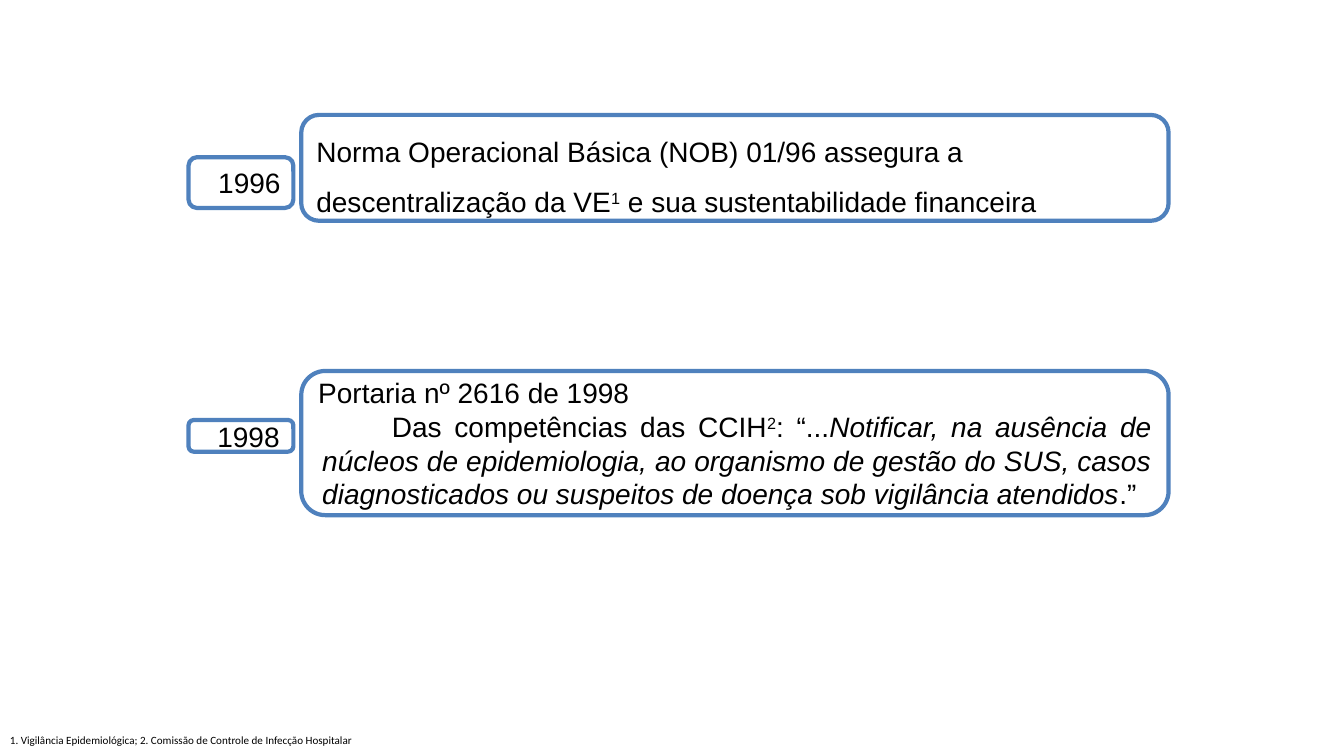
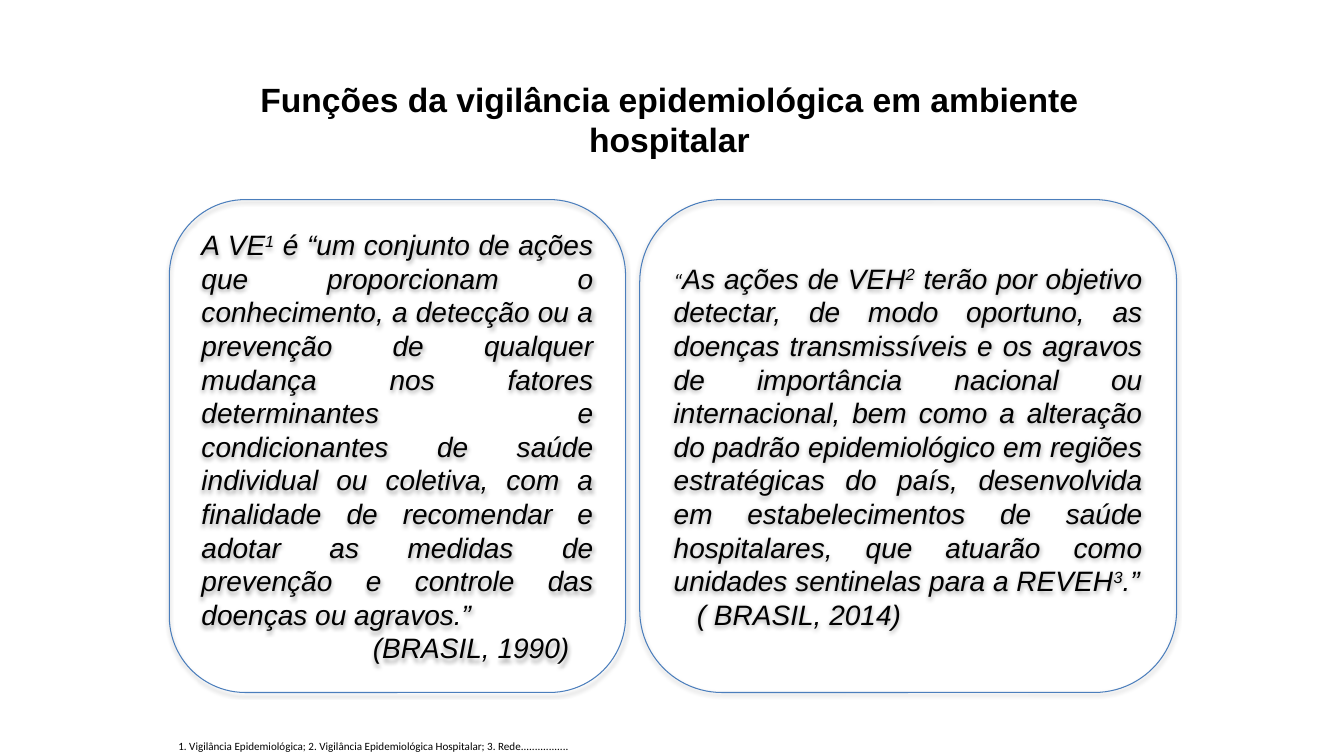
from dataclasses import dataclass

import pptx
import pptx.dml.color
import pptx.enum.shapes
import pptx.enum.text
import pptx.oxml
import pptx.oxml.ns
import pptx.util

Inches, Pt = pptx.util.Inches, pptx.util.Pt
ALIGN = pptx.enum.text.PP_ALIGN
ANCHOR = pptx.enum.text.MSO_ANCHOR
FIT = pptx.enum.text.MSO_AUTO_SIZE
ROUNDED = pptx.enum.shapes.MSO_SHAPE.ROUNDED_RECTANGLE
SLIDE_W, SLIDE_H = 13.33, 7.5


@dataclass(frozen=True)
class Theme:
    font: str = "Arial"
    note_font: str = "Calibri"
    text: str = "000000"
    entry_line: str = "4F81BD"
    panel_line: str = "4B7EBC"
    title_size: float = 24
    body_size: float = 20
    quote_size: float = 15
    note_size: float = 7.9
    entry_width: float = 3
    panel_width: float = 0.75


THEME = Theme()


@dataclass(frozen=True)
class Box:
    """A region in percent of the slide's width and height."""
    x: float
    y: float
    w: float
    h: float

    def inner(self, x, y, w, h):
        """The region at the given shares of this one."""
        return Box(self.x + x * self.w, self.y + y * self.h, w * self.w, h * self.h)

    def emu(self):
        return (Inches(self.x * SLIDE_W / 100), Inches(self.y * SLIDE_H / 100),
                Inches(self.w * SLIDE_W / 100), Inches(self.h * SLIDE_H / 100))


def rgb(value):
    return pptx.dml.color.RGBColor.from_string(value)


def style(font, size=THEME.body_size, name=THEME.font, bold=False, italic=False):
    font.size, font.name = Pt(size), name
    font.bold, font.italic = bold, italic
    font.color.rgb = rgb(THEME.text)


def write(p, runs, align=ALIGN.LEFT, left=0, first=0, **font):
    """Fill a paragraph with (text, mark) runs: ^ superscript, i italic, q small quote."""
    p.alignment = align
    pPr = p._p.get_or_add_pPr()
    pPr.set("marL", str(Inches(left)))
    pPr.set("indent", str(Inches(first)))
    style(p.font, **font)
    for text, mark in runs:
        r = p.add_run()
        r.text = text
        if mark == "^":
            r._r.get_or_add_rPr().set("baseline", "30000")
        elif mark == "i":
            r.font.italic = True
        elif mark == "q":
            r.font.size, r.font.name = Pt(THEME.quote_size), THEME.note_font


def rounded(slide, box, line, width):
    sp = slide.shapes.add_shape(ROUNDED, *box.emu())
    sp.shadow.inherit = False
    sp.fill.background()
    sp.line.color.rgb = rgb(line)
    sp.line.width = Pt(width)
    sp.text_frame.word_wrap = True
    sp.text_frame.vertical_anchor = ANCHOR.MIDDLE
    return sp


def drop_shadow(sp):
    effects = sp._element.spPr.find(pptx.oxml.ns.qn("a:effectLst"))
    effects.append(pptx.oxml.parse_xml(
        f'<a:outerShdw {pptx.oxml.ns.nsdecls("a")} blurRad="{Pt(3.1)}" dist="{Pt(1.8)}" '
        'dir="5400000" rotWithShape="0"><a:srgbClr val="000000">'
        '<a:alpha val="35000"/></a:srgbClr></a:outerShdw>'))


def fill_paragraphs(tf, paragraphs, **font):
    for i, (runs, layout) in enumerate(paragraphs):
        p = tf.add_paragraph() if i else tf.paragraphs[0]
        write(p, runs, **layout, **font)


def timeline_entry(slide, box, year, tag_top, tag_height, paragraphs):
    sp = rounded(slide, box.inner(0.115, 0, 0.885, 1), THEME.entry_line, THEME.entry_width)
    fill_paragraphs(sp.text_frame, paragraphs)
    tag = rounded(slide, box.inner(0, tag_top, 0.107, tag_height),
                  THEME.entry_line, THEME.entry_width)
    tf = tag.text_frame
    tf.margin_left, tf.margin_right = Inches(0.27), Inches(0.02)
    tf.margin_top = tf.margin_bottom = 0
    write(tf.paragraphs[0], [(year, "")])
    return sp


def quote_panel(slide, box, paragraphs):
    sp = rounded(slide, box, THEME.panel_line, THEME.panel_width)
    drop_shadow(sp)
    fill_paragraphs(sp.text_frame, paragraphs, italic=True)


def footnote(slide, box, text):
    tf = slide.shapes.add_textbox(*box.emu()).text_frame
    tf.word_wrap = True
    tf.auto_size = FIT.SHAPE_TO_FIT_TEXT
    write(tf.paragraphs[0], [(text, "")], size=THEME.note_size, name=THEME.note_font)


def title(slide, box, text):
    sp = slide.shapes.title
    sp.left, sp.top, sp.width, sp.height = box.emu()
    tf = sp.text_frame
    tf.word_wrap, tf.auto_size = True, FIT.NONE
    tf.vertical_anchor = ANCHOR.TOP
    write(tf.paragraphs[0], [(text, "")], ALIGN.CENTER, size=THEME.title_size, bold=True)


def timeline_slide(prs):
    slide = prs.slides.add_slide(prs.slide_layouts.get_by_name("Blank"))
    norm = timeline_entry(slide, Box(14.03, 15.2, 72.92, 14), "1996", 0.4, 0.48, [
        ([("Norma Operacional Básica (NOB) 01/96 assegura a descentralização da VE", ""),
          ("1", "^"), (" e sua sustentabilidade financeira", "")], {})])
    norm.text_frame.paragraphs[0].line_spacing = 1.5
    timeline_entry(slide, Box(14.03, 49.07, 72.92, 19.07), "1998", 0.34, 0.22, [
        ([("Portaria nº 2616 de 1998", "")], dict(align=ALIGN.JUSTIFY)),
        ([("Das competências das CCIH", ""), ("2", "^"), (": “...", ""),
          ("Notificar, na ausência de núcleos de epidemiologia, ao organismo de gestão "
           "do SUS, casos diagnosticados ou suspeitos de doença sob vigilância "
           "atendidos", "i"), (".”", "")],
         dict(align=ALIGN.JUSTIFY, left=0.04, first=0.69))])
    footnote(slide, Box(0, 96.4, 44.86, 3.07),
             "1. Vigilância Epidemiológica; 2. Comissão de Controle de Infecção Hospitalar")


def functions_slide(prs):
    slide = prs.slides.add_slide(prs.slide_layouts.get_by_name("Title Only"))
    title(slide, Box(16.05, 9.73, 67.52, 13.73),
          "Funções da vigilância epidemiológica em ambiente hospitalar")
    panels = Box(12.6, 26.4, 74.95, 65.2)
    quote_panel(slide, panels.inner(0, 0, 0.453, 1), [
        ([("A VE", ""), ("1", "^"),
          (" é “um conjunto de ações que proporcionam o conhecimento, a detecção ou a "
           "prevenção de qualquer mudança nos fatores determinantes e condicionantes de "
           "saúde individual ou coletiva, com a finalidade de recomendar e adotar as "
           "medidas de prevenção e controle das doenças ou agravos.”", "")],
         dict(align=ALIGN.JUSTIFY)),
        ([("(BRASIL, 1990)", "")], dict(left=1.7))])
    quote_panel(slide, panels.inner(0.467, 0, 0.533, 1), [
        ([("“", "q"), ("As ações de VEH", ""), ("2", "^"),
          (" terão por objetivo detectar, de modo oportuno, as doenças transmissíveis e "
           "os agravos de importância nacional ou internacional, bem como a alteração do "
           "padrão epidemiológico em regiões estratégicas do país, desenvolvida em "
           "estabelecimentos de saúde hospitalares, que atuarão como unidades sentinelas "
           "para a REVEH", ""), ("3", "^"), (".”", "")],
         dict(align=ALIGN.JUSTIFY)),
        ([("( BRASIL, 2014)", "")], dict(left=0.23))])
    footnote(slide, Box(12.53, 97.2, 40.66, 3.07),
             "1. Vigilância Epidemiológica; 2. Vigilância Epidemiológica Hospitalar; "
             "3. Rede.................")


def main():
    prs = pptx.Presentation()
    prs.slide_width, prs.slide_height = Inches(SLIDE_W), Inches(SLIDE_H)
    timeline_slide(prs)
    functions_slide(prs)
    prs.save("out.pptx")


if __name__ == "__main__":
    main()
